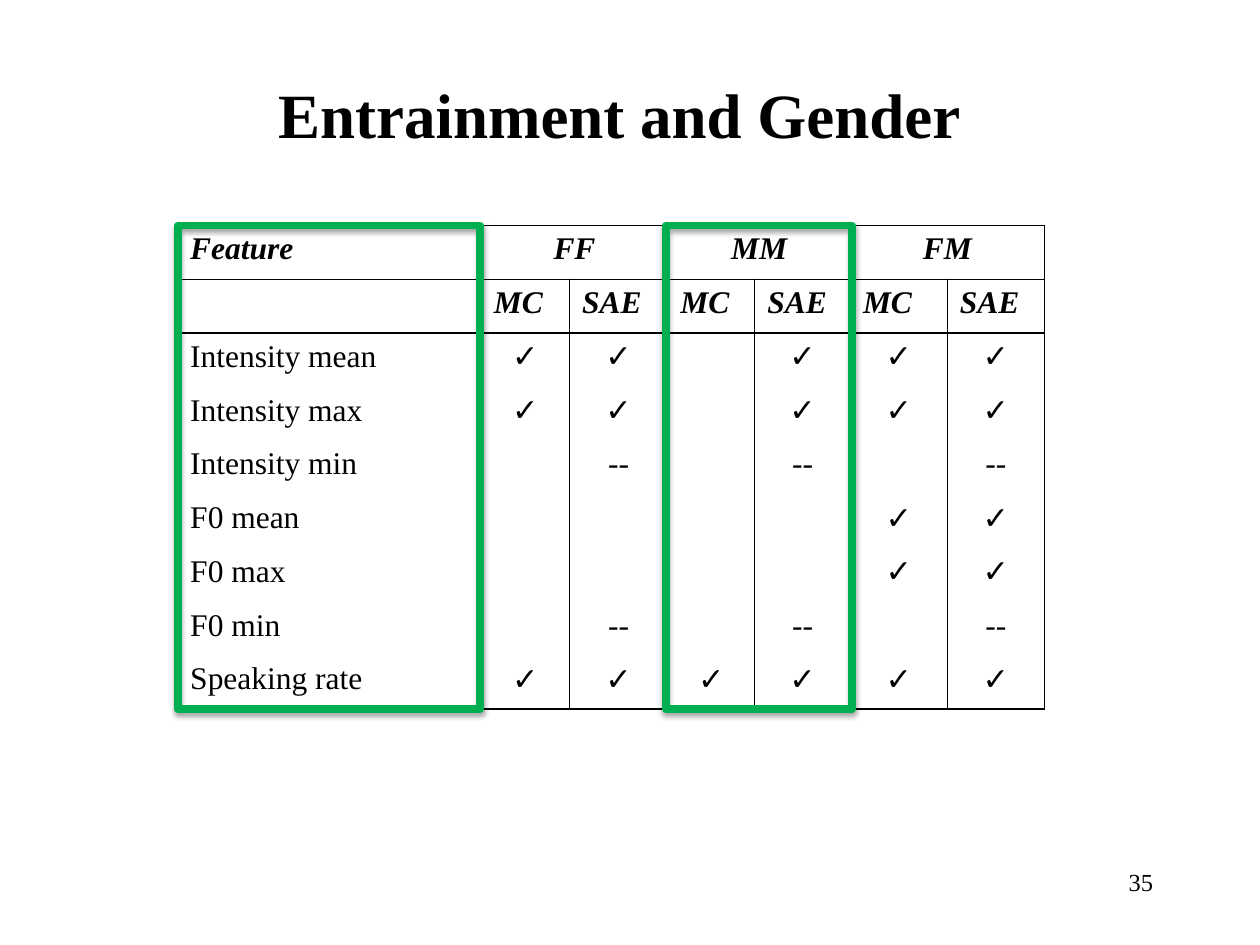
from lxml.etree import SubElement
from pptx import Presentation
from pptx.dml.color import RGBColor
from pptx.enum.shapes import MSO_SHAPE
from pptx.enum.text import MSO_ANCHOR, PP_ALIGN
from pptx.oxml.ns import qn
from pptx.util import Pt

BLACK = RGBColor(0x00, 0x00, 0x00)
GREEN = RGBColor(0x00, 0xB0, 0x50)
SERIF = "Times New Roman"
CHECK = "✓"
DASH = "--"

TABLE_LEFT, TABLE_TOP = 101.5, 128.9
ROW_HEIGHT = 30.72
COLUMN_WIDTHS = [173.5, 50.4, 56.2, 49.7, 54.7, 55.4, 55.4]
PAIRINGS = ["FF", "MM", "FM"]
# One mark per MC and SAE column of each pairing
FEATURES = [
    ("Intensity mean", [CHECK, CHECK, "", CHECK, CHECK, CHECK]),
    ("Intensity max", [CHECK, CHECK, "", CHECK, CHECK, CHECK]),
    ("Intensity min", ["", DASH, "", DASH, "", DASH]),
    ("F0 mean", ["", "", "", "", CHECK, CHECK]),
    ("F0 max", ["", "", "", "", CHECK, CHECK]),
    ("F0 min", ["", DASH, "", DASH, "", DASH]),
    ("Speaking rate", [CHECK] * 6),
]


def write(frame, text, size, align=PP_ALIGN.LEFT, font=SERIF, bold=False, italic=False):
    para = frame.paragraphs[0]
    para.alignment = align
    if not text:
        para.font.size = Pt(size)
        return
    span = para.add_run()
    span.text = text
    span.font.name = font
    span.font.size = Pt(size)
    span.font.bold = bold
    span.font.italic = italic
    span.font.color.rgb = BLACK


def set_borders(cell, sides):
    properties = cell._tc.get_or_add_tcPr()
    for side in "LRTB":
        line = SubElement(properties, qn(f"a:ln{side}"), w=str(Pt(1)))
        if side in sides:
            fill = SubElement(line, qn("a:solidFill"))
            SubElement(fill, qn("a:srgbClr"), val=str(BLACK))
        else:
            SubElement(line, qn("a:noFill"))


def add_title(page, text):
    title = page.shapes.title
    title.left, title.top, title.width, title.height = Pt(48), Pt(28), Pt(612), Pt(73)
    title.text_frame.vertical_anchor = MSO_ANCHOR.MIDDLE
    write(title.text_frame, text, 36, PP_ALIGN.CENTER, bold=True)


def add_page_number(page, number):
    box = page.shapes.add_textbox(Pt(516), Pt(492), Pt(150), Pt(36))
    box.text_frame.word_wrap = True
    write(box.text_frame, number, 14, PP_ALIGN.RIGHT)


def add_feature_table(page):
    row_count = len(FEATURES) + 2
    frame = page.shapes.add_table(
        row_count, len(COLUMN_WIDTHS), Pt(TABLE_LEFT), Pt(TABLE_TOP),
        Pt(sum(COLUMN_WIDTHS)), Pt(ROW_HEIGHT * row_count))
    table = frame.table
    table.first_row = table.horz_banding = False
    for column, width in zip(table.columns, COLUMN_WIDTHS):
        column.width = Pt(width)
    for row in table.rows:
        row.height = Pt(ROW_HEIGHT)

    # Headings: each pairing spans an MC and an SAE column
    pairing_cells = [text for pairing in PAIRINGS for text in (pairing, "")]
    headings = [["Feature"] + pairing_cells, [""] + ["MC", "SAE"] * len(PAIRINGS)]
    for row, texts in enumerate(headings):
        for column, text in enumerate(texts):
            align = PP_ALIGN.CENTER if text in PAIRINGS else PP_ALIGN.LEFT
            write(table.cell(row, column).text_frame, text, 18, align,
                  bold=True, italic=True)

    # Body: feature names and marks
    for row, (feature, marks) in enumerate(FEATURES, start=2):
        write(table.cell(row, 0).text_frame, feature, 18)
        for column, mark in enumerate(marks, start=1):
            font = "Arial" if mark == CHECK else SERIF
            write(table.cell(row, column).text_frame, mark, 18, PP_ALIGN.CENTER, font)

    # Horizontal rules only around the headings and at the bottom
    for row in range(row_count):
        sides = "LR" + ("T" if row <= 2 else "")
        sides += "B" if row < 2 or row == row_count - 1 else ""
        for column in range(len(COLUMN_WIDTHS)):
            cell = table.cell(row, column)
            set_borders(cell, sides)
            cell.fill.background()
    for column in range(1, len(COLUMN_WIDTHS), 2):
        table.cell(0, column).merge(table.cell(0, column + 1))


def add_highlight(page, left, width):
    """Green frame of full table height, with the theme's soft shadow."""
    frame = page.shapes.add_shape(
        MSO_SHAPE.RECTANGLE, Pt(left), Pt(TABLE_TOP),
        Pt(width), Pt(ROW_HEIGHT * (len(FEATURES) + 2)))
    frame.fill.background()
    frame.line.color.rgb = GREEN
    frame.line.width = Pt(4.5)


def main():
    deck = Presentation()
    deck.slide_width, deck.slide_height = Pt(720), Pt(540)
    page = deck.slides.add_slide(deck.slide_layouts[5])
    add_title(page, "Entrainment and Gender")
    add_page_number(page, "35")
    add_feature_table(page)
    # Frames around the MM pairing and the feature names
    add_highlight(page, 380.4, 106.4)
    add_highlight(page, TABLE_LEFT, 172.6)
    deck.save("out.pptx")


if __name__ == "__main__":
    main()
